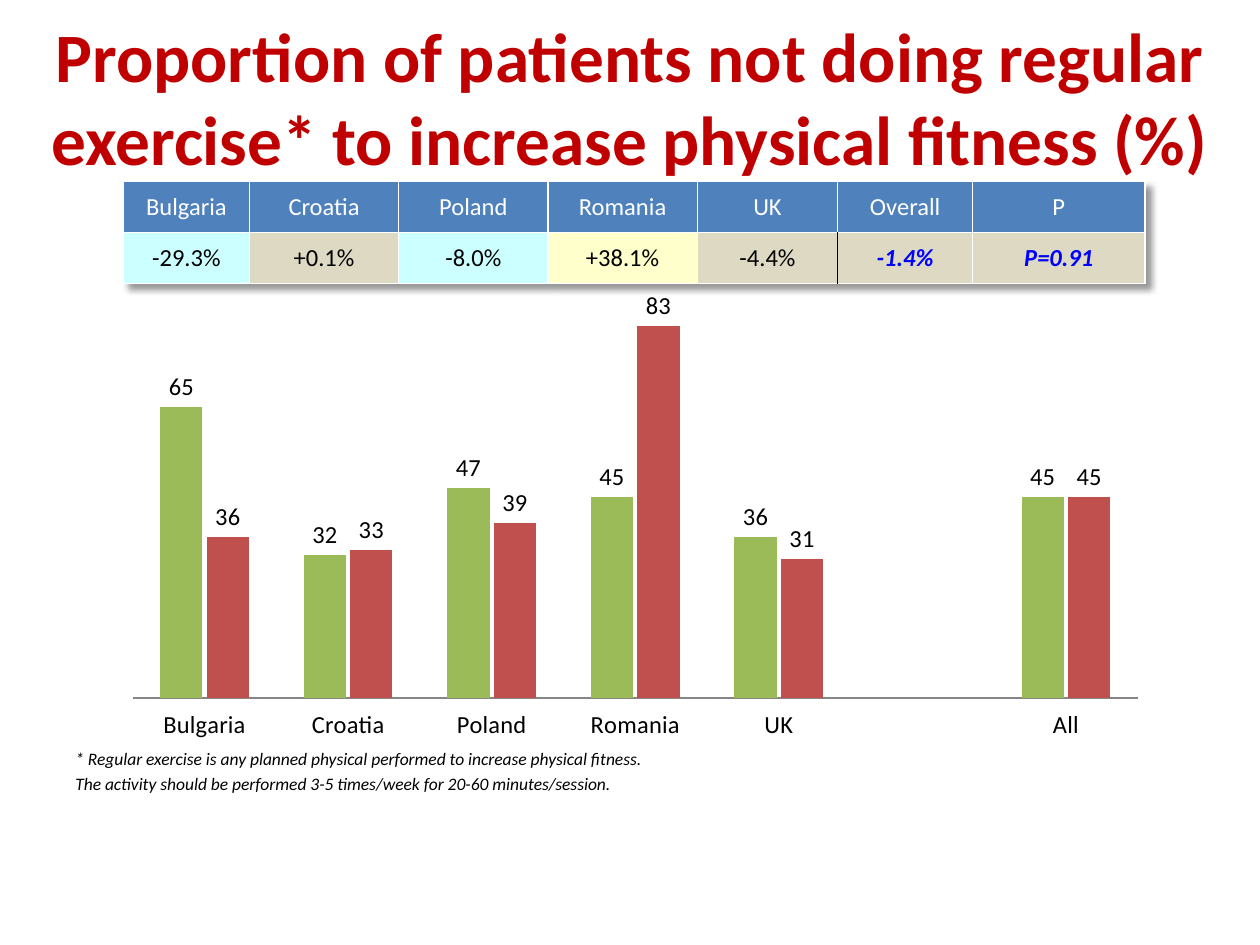
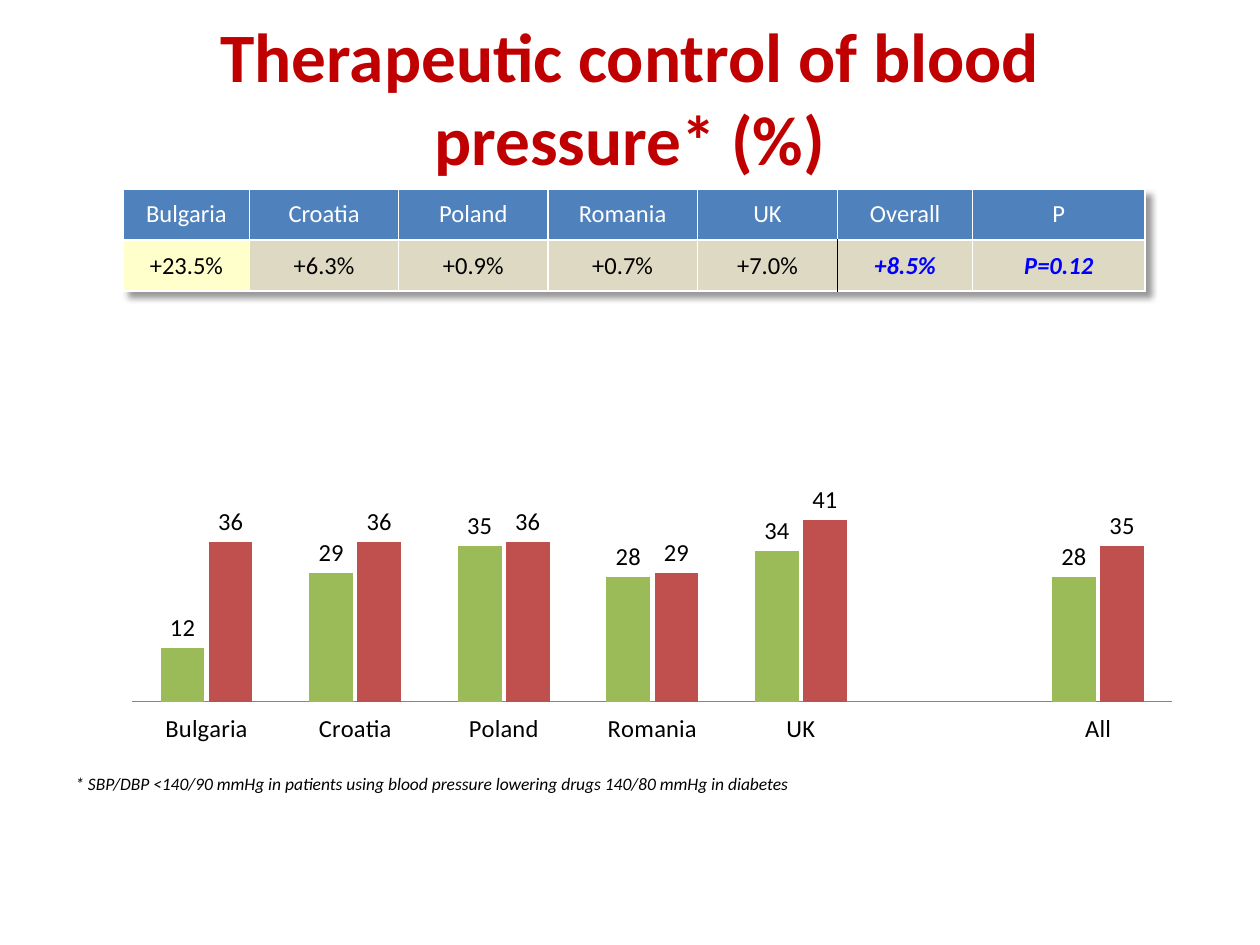
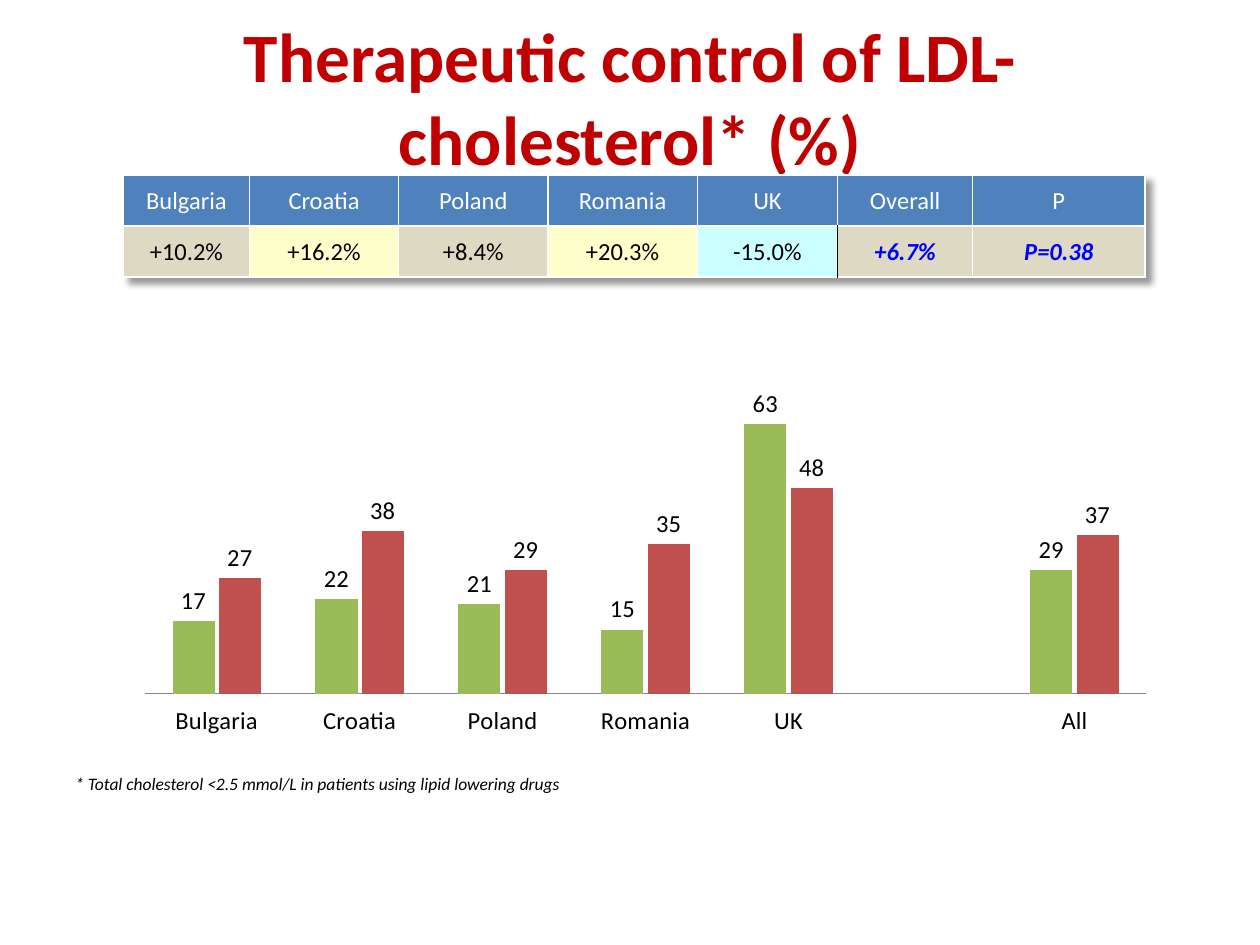
from dataclasses import dataclass

from lxml import etree
from pptx import Presentation
from pptx.chart.data import CategoryChartData
from pptx.dml.color import RGBColor
from pptx.enum.chart import XL_CHART_TYPE, XL_LABEL_POSITION, XL_TICK_LABEL_POSITION, XL_TICK_MARK
from pptx.enum.text import MSO_ANCHOR, MSO_AUTO_SIZE, PP_ALIGN
from pptx.oxml import parse_xml
from pptx.oxml.ns import nsdecls, qn
from pptx.util import Inches, Pt

CLUSTERED = XL_CHART_TYPE.COLUMN_CLUSTERED
OUTSIDE_END = XL_LABEL_POSITION.OUTSIDE_END
LABELS_LOW = XL_TICK_LABEL_POSITION.LOW
NO_TICKS = XL_TICK_MARK.NONE
MIDDLE, BOTTOM = MSO_ANCHOR.MIDDLE, MSO_ANCHOR.BOTTOM
NO_FIT = MSO_AUTO_SIZE.NONE
LEFT, CENTER = PP_ALIGN.LEFT, PP_ALIGN.CENTER


@dataclass(frozen=True)
class Theme:
    """Colours, font and type sizes shared by the slides."""
    font: str = "Calibri"
    title: str = "C00000"
    ink: str = "000000"
    white: str = "FFFFFF"
    header: str = "4F81BD"
    rise: str = "FFFFCC"
    fall: str = "CCFFFF"
    steady: str = "DDD9C3"
    overall: str = "0000FF"
    axis: str = "868686"
    first: str = "9BBB59"
    second: str = "C0504D"
    title_size: float = 39.6
    body_size: float = 14
    note_size: float = 10


THEME = Theme()
WIDTH, HEIGHT = Inches(10), Inches(7.5)
COLUMN, ROW = WIDTH / 100, HEIGHT / 75
COUNTRIES = ["Bulgaria", "Croatia", "Poland", "Romania", "UK"]
HEADERS = COUNTRIES + ["Overall", "P"]
CATEGORIES = COUNTRIES + ["", "All"]
TABLE_COLUMNS = [10, 11.85, 11.85, 11.85, 11.15, 10.7, 13.7]
NOTE_BOX = (5, 58, 90, 5.5)

SLIDES = [
    dict(
        title="Proportion of patients not doing regular exercise* to increase physical fitness (%)",
        title_box=(1.2, 3, 97.6, 9.3),
        notes=["* Regular exercise is any planned physical performed to increase physical fitness.",
               "The activity should be performed 3-5 times/week for 20-60 minutes/session."],
        chart_box=(5.9, 12.8, 84.5, 47.5), plot_top=0.149, plot_height=0.748, axis_width=1.5,
        first=[65, 32, 47, 45, 36, None, 45], second=[36, 33, 39, 83, 31, None, 45],
        table_box=(9.8, 14.4, 81.1, 8.1),
        changes=["-29.3%", "+0.1%", "-8.0%", "+38.1%", "-4.4%", "-1.4%", "P=0.91"],
        rises=["Romania"], falls=["Bulgaria", "Poland"],
    ),
    dict(
        title="Therapeutic control of blood pressure* (%)",
        title_box=(5, 3, 90, 9.3),
        notes=["* SBP/DBP <140/90 mmHg in patients using blood pressure lowering drugs "
               "140/80 mmHg in diabetes"],
        chart_box=(5.7, 11.7, 87.4, 49.1), plot_top=0.179, plot_height=0.717, axis_width=0.75,
        first=[12, 29, 35, 28, 34, None, 28], second=[36, 36, 36, 29, 41, None, 35],
        table_box=(9.8, 15, 81.1, 8.1),
        changes=["+23.5%", "+6.3%", "+0.9%", "+0.7%", "+7.0%", "+8.5%", "P=0.12"],
        rises=["Bulgaria"], falls=[],
    ),
    dict(
        title="Therapeutic control of LDL-cholesterol* (%)",
        title_box=(5, 3, 90, 9.3),
        notes=["* Total cholesterol <2.5 mmol/L in patients using lipid lowering drugs"],
        chart_box=(6.9, 12.6, 84.1, 47.4), plot_top=0.179, plot_height=0.717, axis_width=0.75,
        first=[17, 22, 21, 15, 63, None, 29], second=[27, 38, 29, 35, 48, None, 37],
        table_box=(9.8, 13.9, 81.1, 8.1),
        changes=["+10.2%", "+16.2%", "+8.4%", "+20.3%", "-15.0%", "+6.7%", "P=0.38"],
        rises=["Croatia", "Romania"], falls=["UK"],
    ),
]


def place(box):
    """Turn grid columns and rows into slide lengths."""
    left, top, width, height = box
    return round(left * COLUMN), round(top * ROW), round(width * COLUMN), round(height * ROW)


def style_font(font, size, color, bold=False, italic=False):
    """Format a font with the theme typeface."""
    font.name, font.size, font.bold, font.italic = THEME.font, Pt(size), bold, italic
    font.color.rgb = RGBColor.from_string(color)


def write(frame, *lines, size=THEME.body_size, color=THEME.ink, align=CENTER, gap=0, **style):
    """Write lines as formatted paragraphs into a text frame."""
    for index, line in enumerate(lines):
        paragraph = frame.add_paragraph() if index else frame.paragraphs[0]
        paragraph.alignment = align
        paragraph.space_before = Pt(gap if index else 0)
        run = paragraph.add_run()
        run.text = line
        style_font(run.font, size, color, **style)


def add_title(slide, text, box):
    """Move and format the title placeholder."""
    heading = slide.shapes.title
    heading.left, heading.top, heading.width, heading.height = place(box)
    frame = heading.text_frame
    frame.auto_size, frame.vertical_anchor, frame.word_wrap = NO_FIT, MIDDLE, True
    write(frame, text, size=THEME.title_size, color=THEME.title, bold=True)


def add_notes(slide, lines, box):
    """Set the explanation of the asterisk below the chart."""
    frame = slide.shapes.add_textbox(*place(box)).text_frame
    frame.word_wrap, frame.vertical_anchor = True, BOTTOM
    write(frame, *lines, size=THEME.note_size, align=LEFT, gap=2, italic=True)


def set_plot_area(chart, top, height):
    """Fix the inner plot area as shares of the chart."""
    plot_area = chart._chartSpace.chart.plotArea
    for layout in plot_area.findall(qn("c:layout")):
        plot_area.remove(layout)
    layout = etree.Element(qn("c:layout"))
    manual = etree.SubElement(layout, qn("c:manualLayout"))
    settings = dict(layoutTarget="inner", xMode="edge", yMode="edge",
                    x=0.055, y=top, w=0.945, h=height)
    for tag, value in settings.items():
        etree.SubElement(manual, qn(f"c:{tag}")).set("val", str(value))
    plot_area.insert(0, layout)


def add_country_chart(slide, content):
    """Draw the paired columns by country."""
    data = CategoryChartData(number_format="0")
    data.categories = CATEGORIES
    data.add_series("Series 1", content["first"])
    data.add_series("Series 2", content["second"])
    chart = slide.shapes.add_chart(CLUSTERED, *place(content["chart_box"]), data).chart
    chart.has_legend = chart.has_title = False
    style_font(chart.font, THEME.body_size, THEME.ink)

    countries, percent = chart.category_axis, chart.value_axis
    countries.tick_label_position = LABELS_LOW
    countries.major_tick_mark = countries.minor_tick_mark = NO_TICKS
    countries.format.line.color.rgb = RGBColor.from_string(THEME.axis)
    countries.format.line.width = Pt(content["axis_width"])
    percent.minimum_scale, percent.maximum_scale, percent.major_unit = 0, 100, 10
    percent.has_major_gridlines = percent.visible = False

    plot = chart.plots[0]
    plot.gap_width, plot.overlap, plot.vary_by_categories = 130, -10, False
    for series, color in zip(plot.series, (THEME.first, THEME.second)):
        series.invert_if_negative = False
        series.format.fill.solid()
        series.format.fill.fore_color.rgb = RGBColor.from_string(color)
        labels = series.data_labels
        labels.show_value, labels.position = True, OUTSIDE_END
        labels.number_format, labels.number_format_is_linked = "0", False
        style_font(labels.font, THEME.body_size, THEME.ink)
    set_plot_area(chart, content["plot_top"], content["plot_height"])


def fill_cell(cell, text, fill, **style):
    """Fill a table cell and centre its text."""
    cell.fill.solid()
    cell.fill.fore_color.rgb = RGBColor.from_string(fill)
    cell.vertical_anchor = MIDDLE
    write(cell.text_frame, text, **style)


def rule_cell(cell, side):
    """Draw a dark rule on one side of a cell."""
    cell._tc.get_or_add_tcPr().insert(0, parse_xml(
        f'<a:{side} {nsdecls("a")} w="12700"><a:solidFill><a:srgbClr val="{THEME.ink}"/>'
        f'</a:solidFill></a:{side}>'))


def add_change_table(slide, content):
    """Build the table of changes with its shadow."""
    frame = slide.shapes.add_table(2, len(HEADERS), *place(content["table_box"]))
    table = frame.table
    table.horz_banding = False
    table._tbl.tblPr.insert(0, parse_xml(
        f'<a:effectLst {nsdecls("a")}><a:outerShdw blurRad="50800" dist="50800" dir="2700000" '
        f'algn="tl"><a:srgbClr val="{THEME.ink}"><a:alpha val="40000"/></a:srgbClr>'
        '</a:outerShdw></a:effectLst>'))
    for index, (header, change) in enumerate(zip(HEADERS, content["changes"])):
        table.columns[index].width = round(TABLE_COLUMNS[index] * COLUMN)
        fill_cell(table.cell(0, index), header, THEME.header, color=THEME.white)
        result = table.cell(1, index)
        result.margin_left = result.margin_right = result.margin_top = Inches(0.01)
        result.margin_bottom = 0
        tone = (THEME.rise if header in content["rises"]
                else THEME.fall if header in content["falls"] else THEME.steady)
        summary = header not in COUNTRIES
        fill_cell(result, change, tone, color=THEME.overall if summary else THEME.ink,
                  bold=summary, italic=summary)
    rule_cell(table.cell(1, HEADERS.index("UK")), "lnR")
    rule_cell(table.cell(1, HEADERS.index("Overall")), "lnL")


def add_result_slide(deck, content):
    """Add one slide with title, notes, chart and table."""
    slide = deck.slides.add_slide(deck.slide_layouts.get_by_name("Title Only"))
    add_title(slide, content["title"], content["title_box"])
    add_notes(slide, content["notes"], NOTE_BOX)
    add_country_chart(slide, content)
    add_change_table(slide, content)


def main():
    """Build and save the deck."""
    deck = Presentation()
    deck.slide_width, deck.slide_height = WIDTH, HEIGHT
    for content in SLIDES:
        add_result_slide(deck, content)
    deck.save("out.pptx")


if __name__ == "__main__":
    main()
